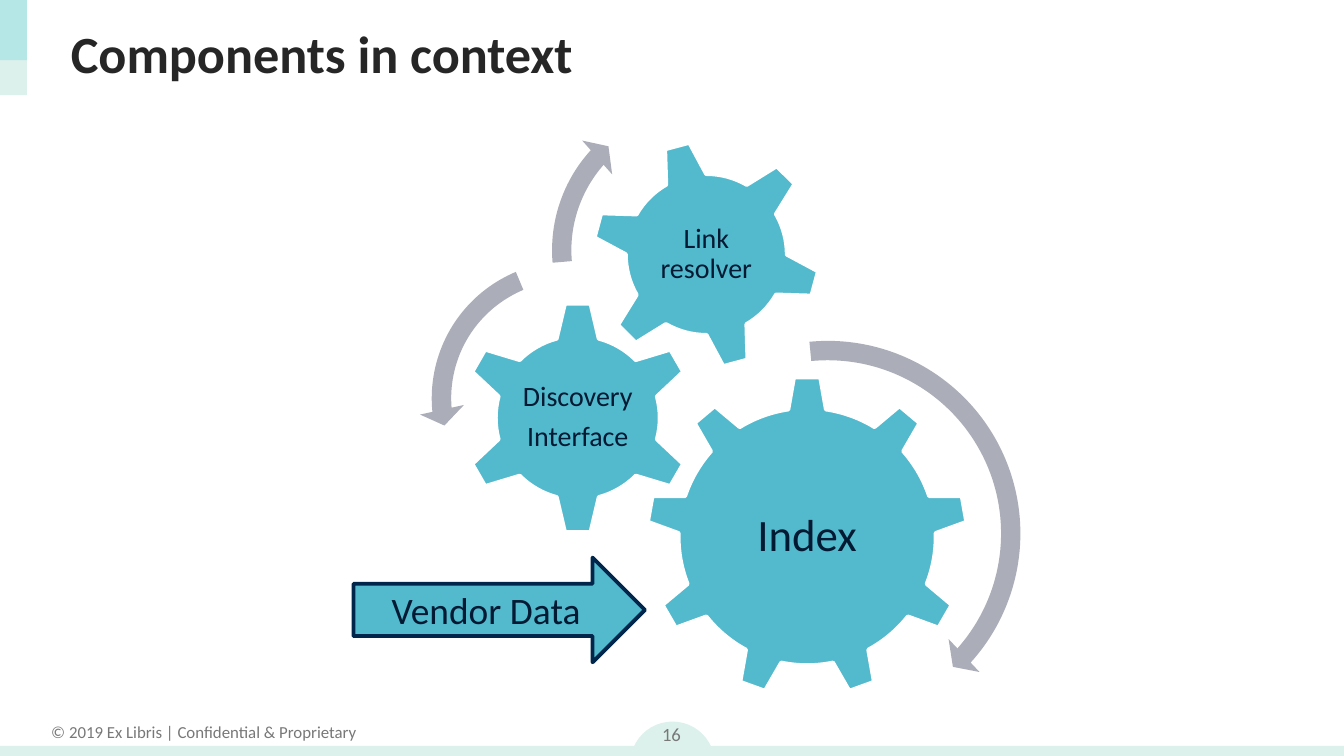
from pptx import Presentation
from pptx.dml.color import RGBColor
from pptx.enum.shapes import MSO_SHAPE
from pptx.enum.text import MSO_ANCHOR, PP_ALIGN
from pptx.oxml.ns import qn
from pptx.util import Cm, Pt
from lxml.etree import SubElement

MINT = RGBColor(0xDC, 0xF1, 0xEC)
AQUA = RGBColor(0x50, 0xCF, 0xDA)
TEAL = RGBColor(0x53, 0xB9, 0xCD)
GRAY = RGBColor(0xAB, 0xAE, 0xB8)
NAVY = RGBColor(0x00, 0x26, 0x4B)
INK = RGBColor(0x00, 0x1A, 0x33)
TITLE = RGBColor(0x26, 0x26, 0x26)
FOOTER = RGBColor(0x78, 0x78, 0x78)
WHITE = RGBColor(0xFF, 0xFF, 0xFF)


class Deck:
    """Draws styled elements on the current slide."""

    font = "Calibri"

    def __init__(self, prs):
        self.s = prs.slides.add_slide(prs.slide_layouts[6])

    def label(self, sp, lines, size, color, bold=False, align=PP_ALIGN.CENTER,
              anchor=MSO_ANCHOR.MIDDLE, wrap=True):
        tf = sp.text_frame
        tf.word_wrap = wrap
        tf.vertical_anchor = anchor
        for i, line in enumerate(lines):
            p = tf.paragraphs[0] if i == 0 else tf.add_paragraph()
            p.alignment = align
            r = p.add_run()
            r.text = line
            r.font.name = self.font
            r.font.size = Pt(size)
            r.font.bold = bold
            r.font.color.rgb = color
        return tf

    def text(self, box, lines, size, color, **style):
        sp = self.s.shapes.add_textbox(*map(Cm, box))
        return self.label(sp, lines, size, color, **style)

    def shape(self, kind, box, fill, line=None, alpha=None):
        sp = self.s.shapes.add_shape(kind, *map(Cm, box))
        sp.shadow.inherit = False
        sp.fill.solid()
        sp.fill.fore_color.rgb = fill
        if alpha is not None:
            clr = sp.element.spPr.find(qn("a:solidFill"))[0]
            SubElement(clr, qn("a:alpha")).set("val", str(alpha * 1000))
        if line is None:
            sp.line.fill.background()
        else:
            sp.line.color.rgb = line
            sp.line.width = Pt(2)
        return sp

    def gear(self, kind, x, y, side, inner, size, lines, inset, turn=0):
        sp = self.shape(kind, (x, y, side, side), TEAL, WHITE)
        sp.rotation = turn
        gap = (side - inner) / 2
        tf = self.text((x + gap, y + gap, inner, inner), lines, size, INK)
        tf.margin_left = tf.margin_right = Cm(inset)
        tf.margin_top = tf.margin_bottom = Cm(inset)
        for p in tf.paragraphs:
            p.line_spacing = 0.9
            p.space_after = Pt(size * 0.35)

    def arc(self, kind, x, y, side, thickness, angles, head):
        sp = self.shape(kind, (x, y, side, side), GRAY)
        values = [thickness / 100, *(a * 0.6 for a in angles), head / 100]
        for i, value in enumerate(values):
            sp.adjustments[i] = value


def main():
    prs = Presentation()
    prs.slide_width, prs.slide_height = Cm(25.4), Cm(14.29)
    d = Deck(prs)

    d.shape(MSO_SHAPE.OVAL, (11.91, 13.64, 1.6, 1.6), MINT)
    d.text((0.69, 13.51, 6.32, 0.64), ["© 2019 Ex Libris | Confidential & Proprietary"],
           9, FOOTER, anchor=MSO_ANCHOR.TOP, wrap=False)
    d.shape(MSO_SHAPE.RECTANGLE, (0, 14.1, 25.4, 0.19), MINT)
    d.shape(MSO_SHAPE.RECTANGLE, (0, 0, 0.51, 1.8), MINT)
    d.shape(MSO_SHAPE.RECTANGLE, (0, 0, 0.51, 1.14), AQUA, alpha=27)
    d.text((11.94, 13.36, 1.5, 1.02), ["16"], 10, FOOTER)
    d.text((1.09, 0.2, 23.39, 1.6), ["Components in context"], 28, TITLE,
           bold=True, align=PP_ALIGN.LEFT)

    d.gear(MSO_SHAPE.GEAR_9, 12.22, 7.11, 6.07, 3.63, 24, ["Index"], 0.08)
    d.gear(MSO_SHAPE.GEAR_6, 8.71, 5.69, 4.42, 2.18, 15, ["Discovery", "Interface"], 0.05)
    d.gear(MSO_SHAPE.GEAR_6, 11.18, 2.64, 4.34, 2.44, 15, ["Link resolver"], 0.05, 345)

    d.arc(MSO_SHAPE.CIRCULAR_ARROW, 11.76, 6.2, 7.77, 4.7, (4.98, 41.85, 264.54), 5.5)
    d.arc(MSO_SHAPE.LEFT_CIRCULAR_ARROW, 7.92, 4.7, 5.66, 6.5, (7.17, 174.82, 247.3), 7.5)
    d.arc(MSO_SHAPE.CIRCULAR_ARROW, 10.19, 1.68, 6.1, 6, (6.57, 221.9, 175.14), 7)

    vendor = d.shape(MSO_SHAPE.RIGHT_ARROW, (6.68, 10.54, 5.51, 1.98), TEAL, NAVY)
    d.label(vendor, ["Vendor Data"], 20, INK)
    prs.save("out.pptx")


if __name__ == "__main__":
    main()
